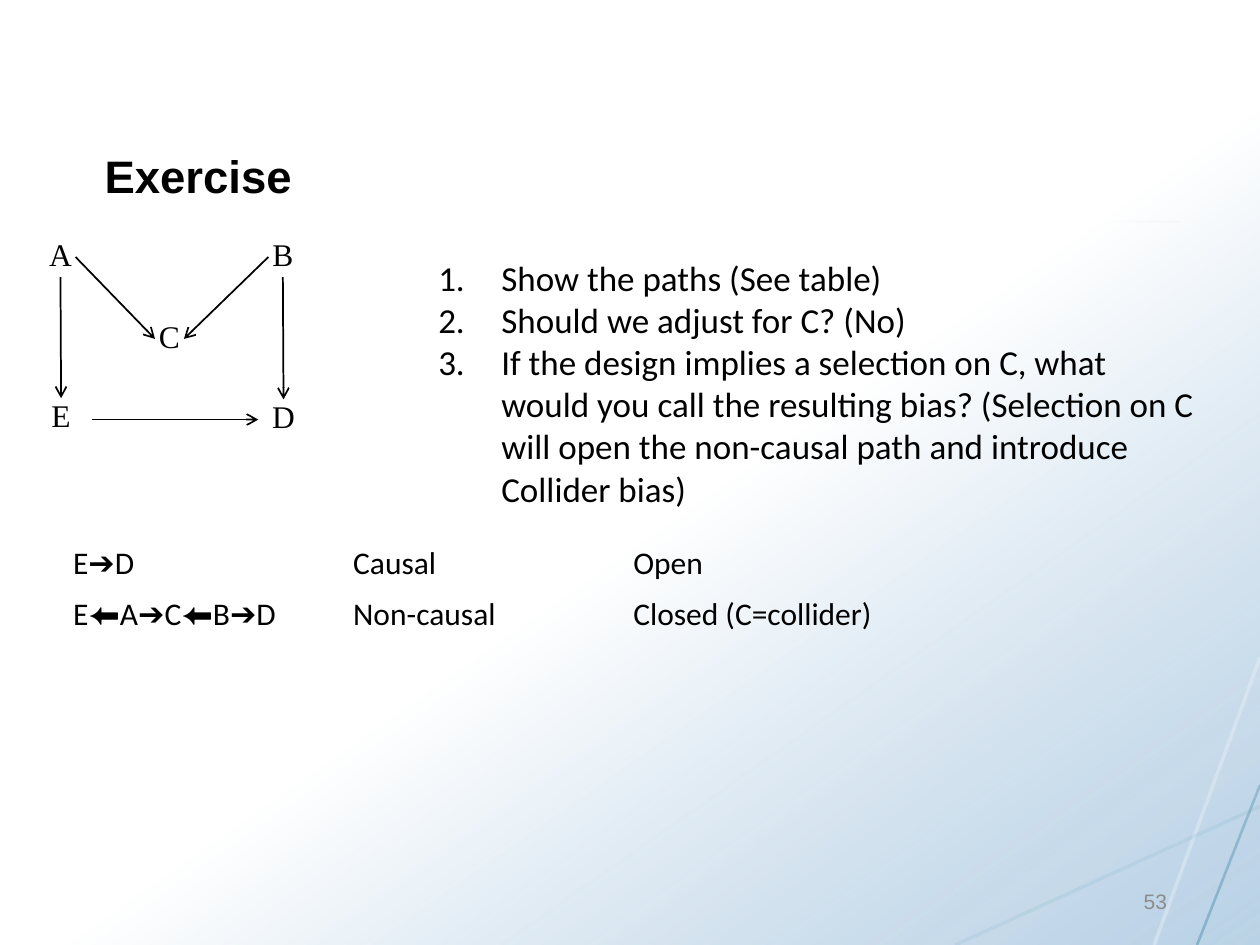
import itertools
from dataclasses import dataclass
from typing import Optional

import pptx
import pptx.util
from lxml import etree
from pptx.dml.color import RGBColor
from pptx.enum.dml import MSO_FILL
from pptx.enum.shapes import MSO_CONNECTOR, MSO_SHAPE
from pptx.enum.text import MSO_ANCHOR, MSO_AUTO_SIZE, PP_ALIGN
from pptx.oxml.ns import qn
from pptx.util import Inches

TOP, LEFT, BOTTOM, RIGHT = range(4)
ARROWS = "➔⬅"
NO_STYLE = "{2D5ABB26-0587-4C30-8999-92F81FD0307C}"


@dataclass(frozen=True)
class Theme:
    ink: str = "000000"
    white: str = "FFFFFF"
    sky: str = "A9C7E0"
    blue: str = "15718F"
    teal: str = "00617F"
    grey: str = "8C8C8C"
    head_font: str = "Arial"
    body_font: str = "Calibri"
    node_font: str = "Times New Roman"
    title_size: int = 26
    list_size: int = 20
    text_size: int = 18
    number_size: int = 12


@dataclass(frozen=True)
class Node:
    name: str
    x: float
    y: float
    w: float


@dataclass(frozen=True)
class Edge:
    start: str
    start_side: int
    end: str
    end_side: int


@dataclass(frozen=True)
class Line:
    x1: float
    y1: float
    x2: float
    y2: float
    color: str
    width: float
    opacity: Optional[int] = None


THEME = Theme()
NODE_HEIGHT = 0.32
NODES = [
    Node("A", 0.36, 1.88, 0.24),
    Node("B", 2.13, 1.88, 0.23),
    Node("C", 1.23, 2.53, 0.23),
    Node("D", 2.13, 3.17, 0.24),
    Node("E", 0.38, 3.16, 0.21),
]
EDGES = [
    Edge("A", BOTTOM, "E", TOP),
    Edge("B", BOTTOM, "D", TOP),
    Edge("A", RIGHT, "C", LEFT),
    Edge("B", LEFT, "C", RIGHT),
]
EXPOSURE_LINE = Line(0.73, 3.33, 2.05, 3.33, THEME.ink, 1)
DECOR = [
    Line(10, 5.22, 9.16, 7.5, THEME.white, 2),
    Line(10, 6.4, 7.58, 7.5, THEME.blue, 2, 16),
    Line(10, 6.23, 9.5, 7.5, THEME.teal, 1.5, 60),
    Line(0.84, 1.75, 9.36, 1.76, THEME.teal, 1),
]
QUESTIONS = [
    "Show the paths (See table)",
    "Should we adjust for C? (No)",
    "If the design implies a selection on C, what would you call the resulting bias? "
    "(Selection on C will open the non-causal path and introduce Collider bias)",
]
PATHS = [
    ("E➔D", "Causal", "Open"),
    ("E⬅A➔C⬅B➔D", "Non-causal", "Closed (C=collider)"),
]


def set_opacity(el, percent: int) -> None:
    for color in el.iter(qn("a:srgbClr")):
        etree.SubElement(color, qn("a:alpha"), val=str(percent * 1000))


def put_text(p, text: str, *, size: int, font: str, color: str = THEME.ink,
             bold: bool = False, align=PP_ALIGN.LEFT, spacing: Optional[float] = None) -> None:
    p.alignment = align
    if spacing:
        p.line_spacing = spacing
    for is_arrow, chars in itertools.groupby(text, lambda c: c in ARROWS):
        r = p.add_run()
        r.text = "".join(chars)
        r.font.size = pptx.util.Pt(size)
        r.font.name = THEME.head_font if is_arrow else font
        r.font.bold = bold
        r.font.color.rgb = RGBColor.from_string(color)


def add_wash(s, w, h) -> None:
    sp = s.shapes.add_shape(MSO_SHAPE.RECTANGLE, 0, 0, w, h)
    sp.shadow.inherit = False
    sp.line.fill.background()
    sp.fill.gradient()
    sp.fill.gradient_angle = 305
    near, far = sp.fill.gradient_stops
    near.position, far.position = 0.54, 1
    near.color.rgb = RGBColor.from_string(THEME.white)
    far.color.rgb = RGBColor.from_string(THEME.sky)
    set_opacity(sp.element.spPr.findall(".//" + qn("a:gs"))[1], 54)


def add_line(s, line: Line, arrow: bool = False):
    ends = (Inches(v) for v in (line.x1, line.y1, line.x2, line.y2))
    cxn = s.shapes.add_connector(MSO_CONNECTOR.STRAIGHT, *ends)
    cxn.line.width = pptx.util.Pt(line.width)
    cxn.line.color.rgb = RGBColor.from_string(line.color)
    spPr = cxn.element.spPr
    ln = spPr.find(qn("a:ln"))
    if line.opacity is not None:
        set_opacity(ln, line.opacity)
    if arrow:
        etree.SubElement(ln, qn("a:tailEnd"), type="arrow")
    etree.SubElement(spPr, qn("a:effectLst"))
    return cxn


def add_node(s, node: Node):
    sp = s.shapes.add_shape(MSO_SHAPE.FLOWCHART_PROCESS, Inches(node.x), Inches(node.y),
                            Inches(node.w), Inches(NODE_HEIGHT))
    sp.shadow.inherit = False
    sp.fill.background()
    sp.line.fill.background()
    tf = sp.text_frame
    tf.margin_left = tf.margin_right = tf.margin_top = tf.margin_bottom = 0
    tf.word_wrap = False
    tf.auto_size = MSO_AUTO_SIZE.SHAPE_TO_FIT_TEXT
    tf.vertical_anchor = MSO_ANCHOR.MIDDLE
    put_text(tf.paragraphs[0], node.name, size=THEME.text_size, font=THEME.node_font,
             align=PP_ALIGN.CENTER, spacing=0.8)
    return sp


def add_box(s, x: float, y: float, w: float, h: float):
    tf = s.shapes.add_textbox(Inches(x), Inches(y), Inches(w), Inches(h)).text_frame
    tf.word_wrap = True
    return tf


def add_questions(s) -> None:
    tf = add_box(s, 3.38, 1.99, 6.25, 1.5)
    for i, question in enumerate(QUESTIONS):
        p = tf.add_paragraph() if i else tf.paragraphs[0]
        put_text(p, question, size=THEME.list_size, font=THEME.body_font)
        pPr = p._p.get_or_add_pPr()
        pPr.set("marL", str(Inches(0.5)))
        pPr.set("indent", str(-Inches(0.5)))
        etree.SubElement(pPr, qn("a:buAutoNum"), type="arabicPeriod")


def add_paths(s) -> None:
    frame = s.shapes.add_table(len(PATHS), len(PATHS[0]), Inches(0.48), Inches(4.27),
                               Inches(6.67), Inches(0.81))
    table = frame.table
    table.first_row = table.horz_banding = False
    next(frame.element.iter(qn("a:tableStyleId"))).text = NO_STYLE
    for cell, text in zip(table.iter_cells(), itertools.chain(*PATHS)):
        cell.fill.background()
        put_text(cell.text_frame.paragraphs[0], text, size=THEME.text_size, font=THEME.body_font)


def main() -> None:
    prs = pptx.Presentation()
    prs.slide_width, prs.slide_height = Inches(10), Inches(7.5)
    s = prs.slides.add_slide(prs.slide_layouts[5])
    add_wash(s, prs.slide_width, prs.slide_height)
    for line in DECOR:
        add_line(s, line)
    add_wash(s, prs.slide_width, prs.slide_height)

    title = s.shapes.title
    title.element.getparent().append(title.element)
    title.left, title.top, title.width, title.height = map(Inches, (0.73, 0.33, 8.62, 1.33))
    title.text_frame.vertical_anchor = MSO_ANCHOR.BOTTOM
    put_text(title.text_frame.paragraphs[0], "Exercise", size=THEME.title_size,
             font=THEME.head_font, bold=True)

    nodes = {node.name: add_node(s, node) for node in NODES}
    for edge in EDGES:
        cxn = add_line(s, Line(0, 0, 0, 0, THEME.ink, 1), arrow=True)
        cxn.begin_connect(nodes[edge.start], edge.start_side)
        cxn.end_connect(nodes[edge.end], edge.end_side)
    add_line(s, EXPOSURE_LINE, arrow=True)

    add_questions(s)
    add_paths(s)
    tf = add_box(s, 7.17, 6.95, 2.19, 0.4)
    tf.vertical_anchor = MSO_ANCHOR.MIDDLE
    put_text(tf.paragraphs[0], "53", size=THEME.number_size, font=THEME.head_font,
             color=THEME.grey, align=PP_ALIGN.RIGHT)
    prs.save("out.pptx")


if __name__ == "__main__":
    main()
